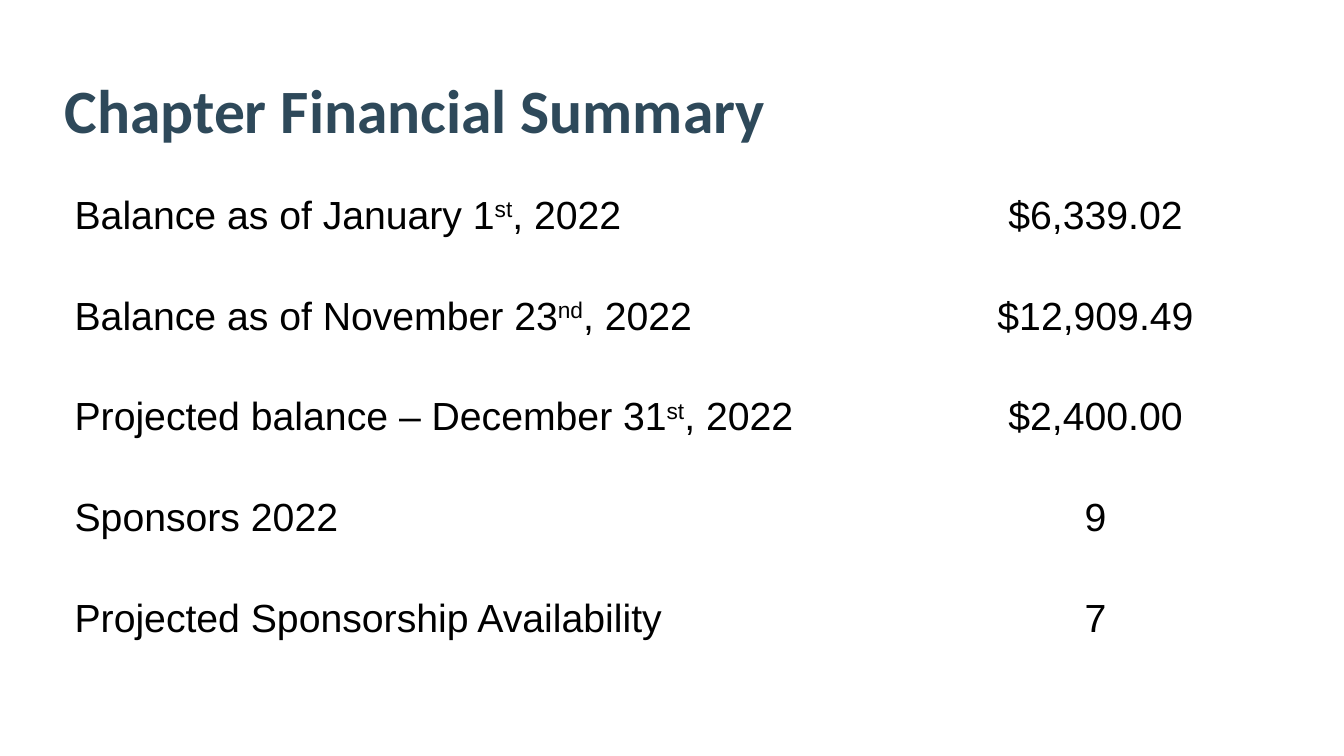
from pptx import Presentation
from pptx.dml.color import RGBColor
from pptx.enum.text import MSO_ANCHOR, PP_ALIGN
from pptx.util import Inches, Pt

COLORS = {"background": "FFFFFF", "title": "2E495A", "text": "000000"}
LEFT, WIDTH = 0.64, 12.06
COLUMN_WIDTHS = [8.39, 3.67]
TABLE_TOP, ROW_HEIGHT = 1.64, 1.0
SUMMARY = [
    (["Balance as of January 1", "st", ", 2022"], "$6,339.02"),
    (["Balance as of November 23", "nd", ", 2022"], "$12,909.49"),
    (["Projected balance – December 31", "st", ", 2022"], "$2,400.00"),
    (["Sponsors 2022"], "9"),
    (["Projected Sponsorship Availability"], "7"),
]


def add_run(paragraph, text, font_name, size, color, bold=False):
    run = paragraph.add_run()
    run.text = text
    run.font.name = font_name
    run.font.size = Pt(size)
    run.font.bold = bold
    run.font.color.rgb = RGBColor.from_string(COLORS[color])
    return run


def set_title(slide, text):
    title = slide.shapes.title
    title.left, title.top = Inches(LEFT), Inches(0.4)
    title.width, title.height = Inches(WIDTH), Inches(1.45)
    frame = title.text_frame
    frame.word_wrap = True
    frame.vertical_anchor = MSO_ANCHOR.MIDDLE
    frame.margin_left = frame.margin_right = Inches(0)
    frame.margin_top = frame.margin_bottom = Inches(0)
    paragraph = frame.paragraphs[0]
    paragraph.alignment = PP_ALIGN.LEFT
    paragraph.line_spacing = 0.9
    add_run(paragraph, text, "Calibri", 44, "title", bold=True)


def fill_cell(cell, parts, alignment):
    cell.fill.solid()
    cell.fill.fore_color.rgb = RGBColor.from_string(COLORS["background"])
    cell.vertical_anchor = MSO_ANCHOR.MIDDLE
    paragraph = cell.text_frame.paragraphs[0]
    paragraph.alignment = alignment
    for part in parts:
        run = add_run(paragraph, part, "Arial", 28, "text")
        if part in ("st", "nd"):
            run.font._element.set("baseline", "30000")


def add_summary_table(slide):
    table = slide.shapes.add_table(
        len(SUMMARY), len(COLUMN_WIDTHS), Inches(LEFT), Inches(TABLE_TOP),
        Inches(WIDTH), Inches(ROW_HEIGHT * len(SUMMARY)),
    ).table
    table.first_row = False
    table.horz_banding = False
    for column, width in zip(table.columns, COLUMN_WIDTHS):
        column.width = Inches(width)
    for index, (label_parts, value) in enumerate(SUMMARY):
        fill_cell(table.cell(index, 0), label_parts, PP_ALIGN.LEFT)
        fill_cell(table.cell(index, 1), [value], PP_ALIGN.CENTER)


def main():
    presentation = Presentation()
    presentation.slide_width = Inches(13.33)
    presentation.slide_height = Inches(7.5)
    slide = presentation.slides.add_slide(presentation.slide_layouts[5])
    set_title(slide, "Chapter Financial Summary")
    add_summary_table(slide)
    presentation.save("out.pptx")


if __name__ == "__main__":
    main()
